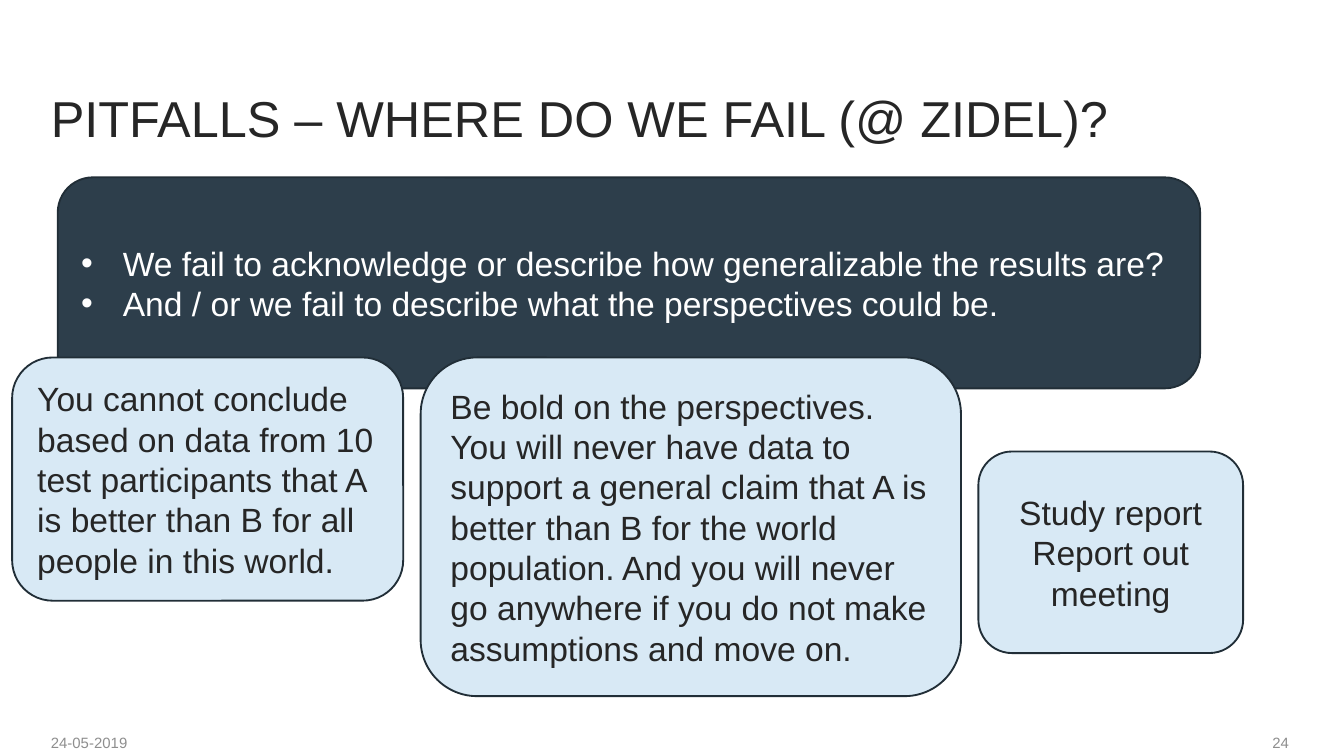
import pptx
import pptx.util
import pptx.dml.color
import pptx.enum.shapes
import pptx.enum.text
import pptx.oxml.ns
import lxml.etree

Inches = pptx.util.Inches
Pt = pptx.util.Pt
ALIGN = pptx.enum.text.PP_ALIGN
ANCHOR = pptx.enum.text.MSO_ANCHOR
COLOURS = {
    "ink": "262626",
    "footer": "8E8E8E",
    "white": "FFFFFF",
    "navy": "2D3E4B",
    "sky": "D8E9F5",
    "outline": "212E37",
}


def rgb(name):
    return pptx.dml.color.RGBColor.from_string(COLOURS[name])


def write(shape, lines, size, colour, align, anchor, bulleted=False):
    frame = shape.text_frame
    frame.text = "\n".join(lines)
    frame.word_wrap = True
    frame.vertical_anchor = anchor
    for paragraph in frame.paragraphs:
        paragraph.alignment = align
        if bulleted:
            properties = paragraph._p.get_or_add_pPr()
            properties.set("marL", str(Inches(0.31)))
            properties.set("indent", str(-Inches(0.31)))
            for tag, key, value in [("a:buFont", "typeface", "Arial"), ("a:buChar", "char", "•")]:
                lxml.etree.SubElement(properties, pptx.oxml.ns.qn(tag)).set(key, value)
        for run in paragraph.runs:
            run.font.name = "Arial"
            run.font.size = Pt(size)
            run.font.color.rgb = rgb(colour)


# Widescreen, 16:9
presentation = pptx.Presentation()
presentation.slide_width = Inches(10)
presentation.slide_height = Inches(10) * 9 // 16
slide = presentation.slides.add_slide(presentation.slide_layouts[6])

# Date and page number
for text, left, align in [("24-05-2019", 0.28, ALIGN.LEFT), ("24", 7.36, ALIGN.RIGHT)]:
    footer = slide.shapes.add_textbox(Inches(left), Inches(5.46), Inches(2.33), Inches(0.4))
    write(footer, [text], 8, "footer", align, ANCHOR.TOP)
    footer.text_frame.margin_top = 0
    footer.text_frame.margin_bottom = Inches(0.04)

title = slide.shapes.add_textbox(Inches(0.28), Inches(0.22), Inches(9.45), Inches(0.93))
write(title, ["PITFALLS – WHERE DO WE FAIL (@ ZIDEL)?"], 27, "ink", ALIGN.LEFT, ANCHOR.BOTTOM)

# Cards, back to front: box, fill, text colour, alignment, bulleted, lines
cards = [
    ((7.28, 3.36, 1.97, 1.5), "sky", "ink", ALIGN.CENTER, False,
     ["Study report", "Report out meeting"]),
    ((0.43, 1.32, 8.5, 1.57), "navy", "white", ALIGN.LEFT, True,
     ["We fail to acknowledge or describe how generalizable the results are?",
      "And / or we fail to describe what the perspectives could be."]),
    ((3.13, 2.66, 4.02, 2.52), "sky", "ink", ALIGN.LEFT, False,
     ["Be bold on the perspectives. You will never have data to support a general claim "
      "that A is better than B for the world population. And you will never go anywhere "
      "if you do not make assumptions and move on."]),
    ((0.09, 2.66, 2.91, 1.81), "sky", "ink", ALIGN.LEFT, False,
     ["You cannot conclude based on data from 10 test participants that A is better "
      "than B for all people in this world."]),
]
for box, fill, colour, align, bulleted, lines in cards:
    card = slide.shapes.add_shape(
        pptx.enum.shapes.MSO_SHAPE.ROUNDED_RECTANGLE, *[Inches(length) for length in box])
    card.shadow.inherit = False
    card.fill.solid()
    card.fill.fore_color.rgb = rgb(fill)
    card.line.color.rgb = rgb("outline")
    card.line.width = Pt(1)
    write(card, lines, 18, colour, align, ANCHOR.MIDDLE, bulleted)

presentation.save("out.pptx")
